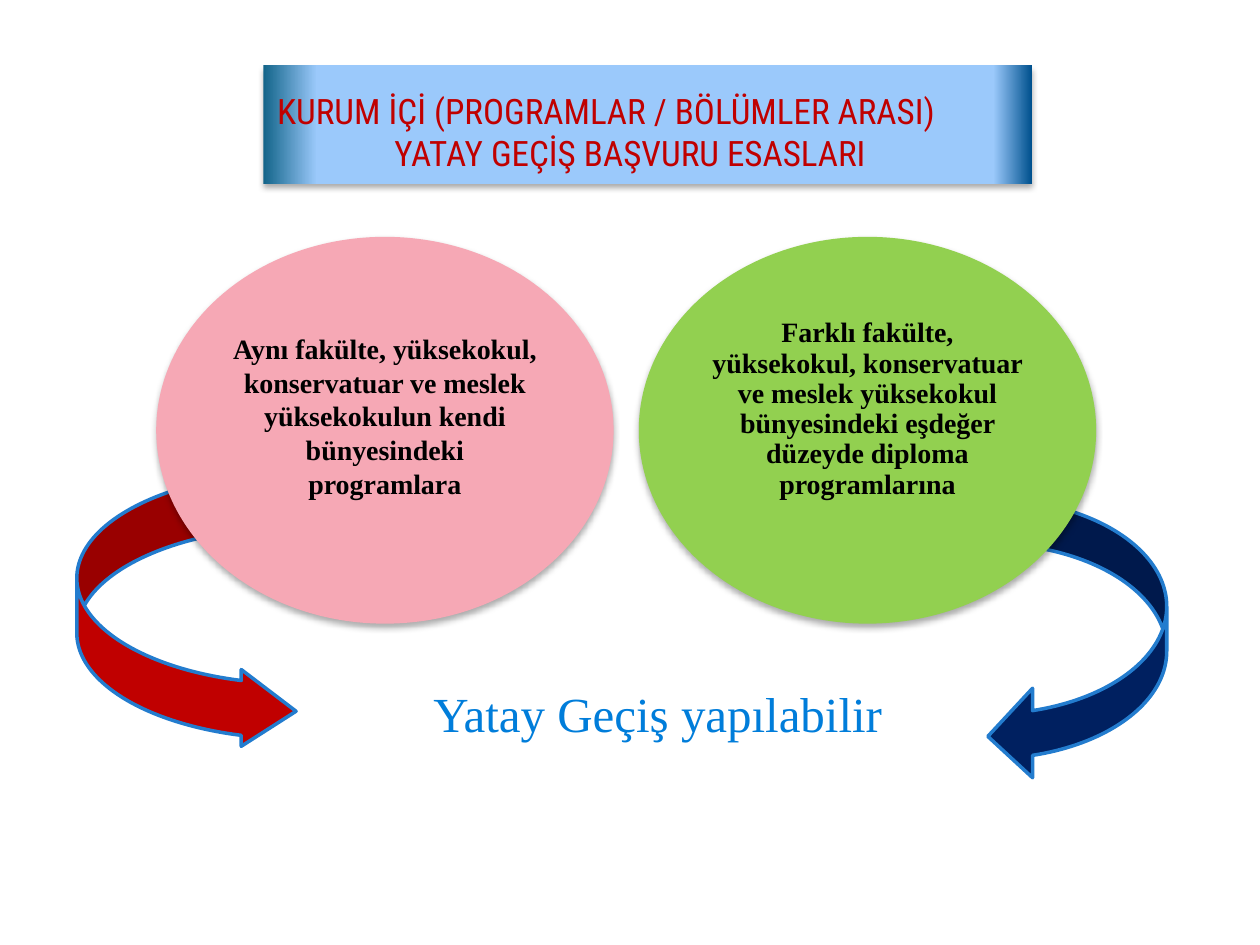
from lxml import etree
from pptx import Presentation
from pptx.dml.color import RGBColor
from pptx.enum import shapes, text
from pptx.oxml import ns
from pptx.util import Emu, Inches, Pt

# The slide is a grid of 100 columns and 75 rows of equal cells
COLS, ROWS = 100, 75
CELL = Inches(10) / COLS

COLORS = {
    "red": "C00000", "navy": "002060", "arrow_edge": "237CCE",
    "pink": "F6A8B5", "green": "92D050", "black": "000000",
    "result": "007DDA", "teal": "126489", "sky": "9BC9FB", "deep": "00518E",
}
SERIF, CONDENSED = "Times New Roman", "Roboto Condensed"


def color(name):
    return RGBColor.from_string(COLORS[name])


def cells(*counts):
    return [Emu(round(count * CELL)) for count in counts]


def add_color(parent, name):
    return etree.SubElement(parent, ns.qn("a:srgbClr"), val=COLORS[name])


def add_preset(slide, preset, box, fill=None, edge=None):
    shape = slide.shapes.add_shape(preset, *cells(*box))
    shape.shadow.inherit = False
    if fill:
        shape.fill.solid()
        shape.fill.fore_color.rgb = color(fill)
    if edge:
        shape.line.color.rgb = color(edge)
        shape.line.width = Pt(2)
    else:
        shape.line.fill.background()
    return shape


def cast_shadow(shape):
    effects = shape._element.spPr.find(ns.qn("a:effectLst"))
    shadow = etree.SubElement(
        effects, ns.qn("a:outerShdw"), blurRad=str(Pt(3.5)), dist=str(Pt(2.2)),
        dir="5400000", rotWithShape="0")
    etree.SubElement(add_color(shadow, "black"), ns.qn("a:alpha"), val="32000")


def write(shape, words, size, font, ink, bold=False, spacing=None,
          align=text.PP_ALIGN.CENTER, insets=(1, 0.5, 1, 0.5), hanging=0):
    """Insets (left, top, right, bottom) and hanging indent are in cells."""
    frame = shape.text_frame
    frame.word_wrap = True
    frame.vertical_anchor = text.MSO_ANCHOR.MIDDLE
    (frame.margin_left, frame.margin_top,
     frame.margin_right, frame.margin_bottom) = cells(*insets)
    paragraph = frame.paragraphs[0]
    paragraph.alignment = align
    if spacing:
        paragraph.line_spacing = spacing
    if hanging:
        indent, = cells(hanging)
        properties = paragraph._p.get_or_add_pPr()
        properties.set("marL", str(indent))
        properties.set("indent", str(-indent))
    run = paragraph.add_run()
    run.text = words
    run.font.size, run.font.name, run.font.bold = Pt(size), font, bold
    run.font.color.rgb = color(ink)


def title_banner(slide, box):
    banner = add_preset(slide, shapes.MSO_SHAPE.RECTANGLE, box)
    banner.fill.gradient()
    banner.fill.gradient_angle = 0
    stops = banner._element.spPr.find(".//" + ns.qn("a:gsLst"))
    for stop in list(stops):
        stops.remove(stop)
    for percent, name in ((0, "teal"), (7, "sky"), (95, "sky"), (100, "deep")):
        add_color(etree.SubElement(stops, ns.qn("a:gs"), pos=str(percent * 1000)), name)
    cast_shadow(banner)
    # The second line starts further right than the first
    write(banner, "KURUM İÇİ (PROGRAMLAR / BÖLÜMLER ARASI) YATAY GEÇİŞ BAŞVURU ESASLARI",
          20, CONDENSED, "red", align=text.PP_ALIGN.LEFT,
          insets=(1.1, 1.5, 2, 0.5), hanging=9.3)


def scope_circle(slide, box, words, fill, lift, spacing=None):
    circle = add_preset(slide, shapes.MSO_SHAPE.OVAL, box, fill)
    cast_shadow(circle)
    write(circle, words, 16, SERIF, "black", bold=True, spacing=spacing,
          insets=(0.2, 0.2, 0.2, lift))


def curved_arrow(slide, box, fill, head, mirrored=False):
    arrow = add_preset(slide, shapes.MSO_SHAPE.CURVED_RIGHT_ARROW, box, fill, "arrow_edge")
    for index, share in enumerate((0.25, head, 0.25)):
        arrow.adjustments[index] = share
    if mirrored:
        arrow._element.spPr.find(ns.qn("a:xfrm")).set("flipH", "1")


def result_line(slide, box):
    result = slide.shapes.add_textbox(*cells(*box))
    write(result, "Yatay Geçiş yapılabilir", 28, SERIF, "result")


def main():
    deck = Presentation()
    deck.slide_width, deck.slide_height = cells(COLS, ROWS)
    slide = deck.slides.add_slide(deck.slide_layouts[6])

    # Arrows lead from behind the circles to the result
    curved_arrow(slide, (6.1, 37.5, 17.4, 22), "red", 0.35)
    curved_arrow(slide, (78.4, 39.6, 14.2, 22.4), "navy", 0.5, mirrored=True)
    result_line(slide, (30.5, 53.7, 43.4, 5.7))

    title_banner(slide, (20.9, 5.2, 61, 9.4))

    # Two equal circles side by side
    left, top, width, height, gap = 12.4, 18.8, 36.3, 30.7, 2
    scope_circle(slide, (left + width + gap, top, width, height),
                 "Farklı fakülte, yüksekokul, konservatuar ve meslek yüksekokul "
                 "bünyesindeki eşdeğer düzeyde diploma programlarına",
                 "green", lift=3.5, spacing=0.9)
    scope_circle(slide, (left, top, width, height),
                 "Aynı fakülte, yüksekokul, konservatuar ve meslek yüksekokulun "
                 "kendi bünyesindeki programlara",
                 "pink", lift=2.5)

    deck.save("out.pptx")


if __name__ == "__main__":
    main()
